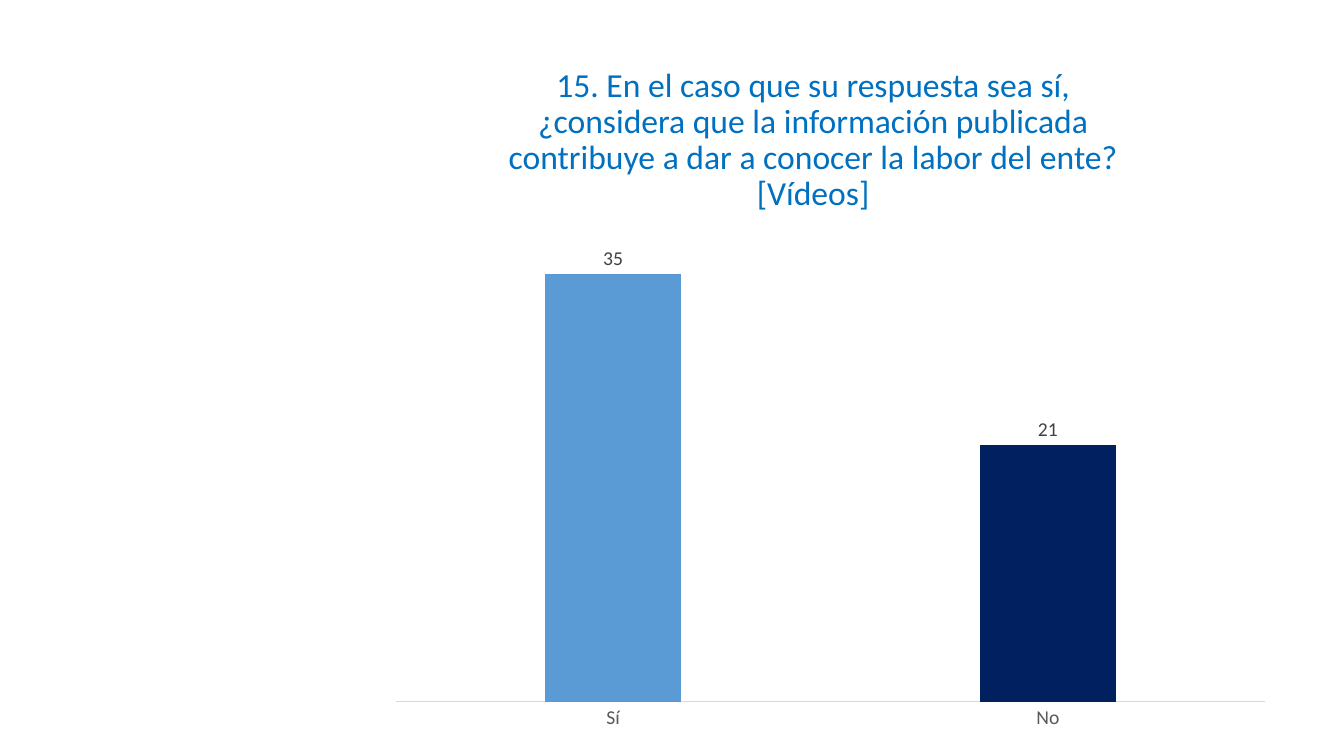
from dataclasses import dataclass
from typing import Any

from pptx import Presentation, util as u
from pptx.chart.data import CategoryChartData
from pptx.dml.color import RGBColor
from pptx.enum import chart as charts, text

TITLE_ONLY = 5


@dataclass(frozen=True)
class Theme:
    font: str = "Calibri"
    title_size: int = 24
    chart_size: int = 14
    title: str = "0070C0"
    axis_text: str = "595959"
    axis_line: str = "D9D9D9"
    label: str = "404040"


@dataclass(frozen=True)
class Answer:
    name: str
    count: int
    color: str


@dataclass(frozen=True)
class Area:
    """Left, top, width and height as shares of the slide's size."""
    left: float
    top: float
    width: float
    height: float

    def lengths(self, deck: Any) -> tuple[int, int, int, int]:
        across, down = deck.slide_width, deck.slide_height
        return (int(self.left * across), int(self.top * down),
                int(self.width * across), int(self.height * down))


THEME = Theme()
QUESTION = ("15. En el caso que su respuesta sea sí, ¿considera que la información "
            "publicada contribuye a dar a conocer la labor del ente? [Vídeos]")
ANSWERS = [Answer("Sí", 35, "5B9BD5"), Answer("No", 21, "002060")]
TITLE_AREA = Area(0.352, 0.104, 0.506, 0.164)
CHART_AREA = Area(0.281, 0.268, 0.674, 0.712)


def format_font(font: Any, *, size: int, color: str) -> None:
    font.name = THEME.font
    font.size = u.Pt(size)
    font.color.rgb = RGBColor.from_string(color)


def fill_solid(fill: Any, color: str) -> None:
    fill.solid()
    fill.fore_color.rgb = RGBColor.from_string(color)


def write_title(deck: Any, page: Any) -> None:
    box = page.shapes.title
    box.left, box.top, box.width, box.height = TITLE_AREA.lengths(deck)
    frame = box.text_frame
    frame.word_wrap = True
    frame.auto_size = text.MSO_AUTO_SIZE.NONE
    frame.vertical_anchor = text.MSO_ANCHOR.MIDDLE
    para = frame.paragraphs[0]
    para.alignment = text.PP_ALIGN.CENTER
    para.line_spacing = 0.9
    span = para.add_run()
    span.text = QUESTION
    format_font(span.font, size=THEME.title_size, color=THEME.title)


def draw_chart(deck: Any, page: Any) -> None:
    data = CategoryChartData()
    data.categories = [answer.name for answer in ANSWERS]
    data.add_series("Series 1", [answer.count for answer in ANSWERS])
    chart = page.shapes.add_chart(charts.XL_CHART_TYPE.COLUMN_CLUSTERED,
                                  *CHART_AREA.lengths(deck), data).chart
    chart.has_legend = False
    chart.has_title = False
    format_font(chart.font, size=THEME.chart_size, color=THEME.axis_text)

    names = chart.category_axis
    names.major_tick_mark = charts.XL_TICK_MARK.NONE
    names.format.line.color.rgb = RGBColor.from_string(THEME.axis_line)
    names.format.line.width = u.Pt(0.75)
    format_font(names.tick_labels.font, size=THEME.chart_size, color=THEME.axis_text)

    counts = chart.value_axis
    counts.visible = False
    counts.has_major_gridlines = False
    counts.minimum_scale, counts.maximum_scale = 0, 40

    plot = chart.plots[0]
    plot.gap_width, plot.overlap = 219, -27
    plot.vary_by_categories = False
    series = plot.series[0]
    fill_solid(series.format.fill, ANSWERS[-1].color)
    for index, answer in enumerate(ANSWERS):
        fill_solid(series.points[index].format.fill, answer.color)

    labels = series.data_labels
    labels.show_value = True
    labels.position = charts.XL_LABEL_POSITION.OUTSIDE_END
    format_font(labels.font, size=THEME.chart_size, color=THEME.label)


def main() -> None:
    deck = Presentation()
    deck.slide_width, deck.slide_height = u.Inches(13.33), u.Inches(7.5)
    page = deck.slides.add_slide(deck.slide_layouts[TITLE_ONLY])
    write_title(deck, page)
    draw_chart(deck, page)
    deck.save("out.pptx")


if __name__ == "__main__":
    main()
